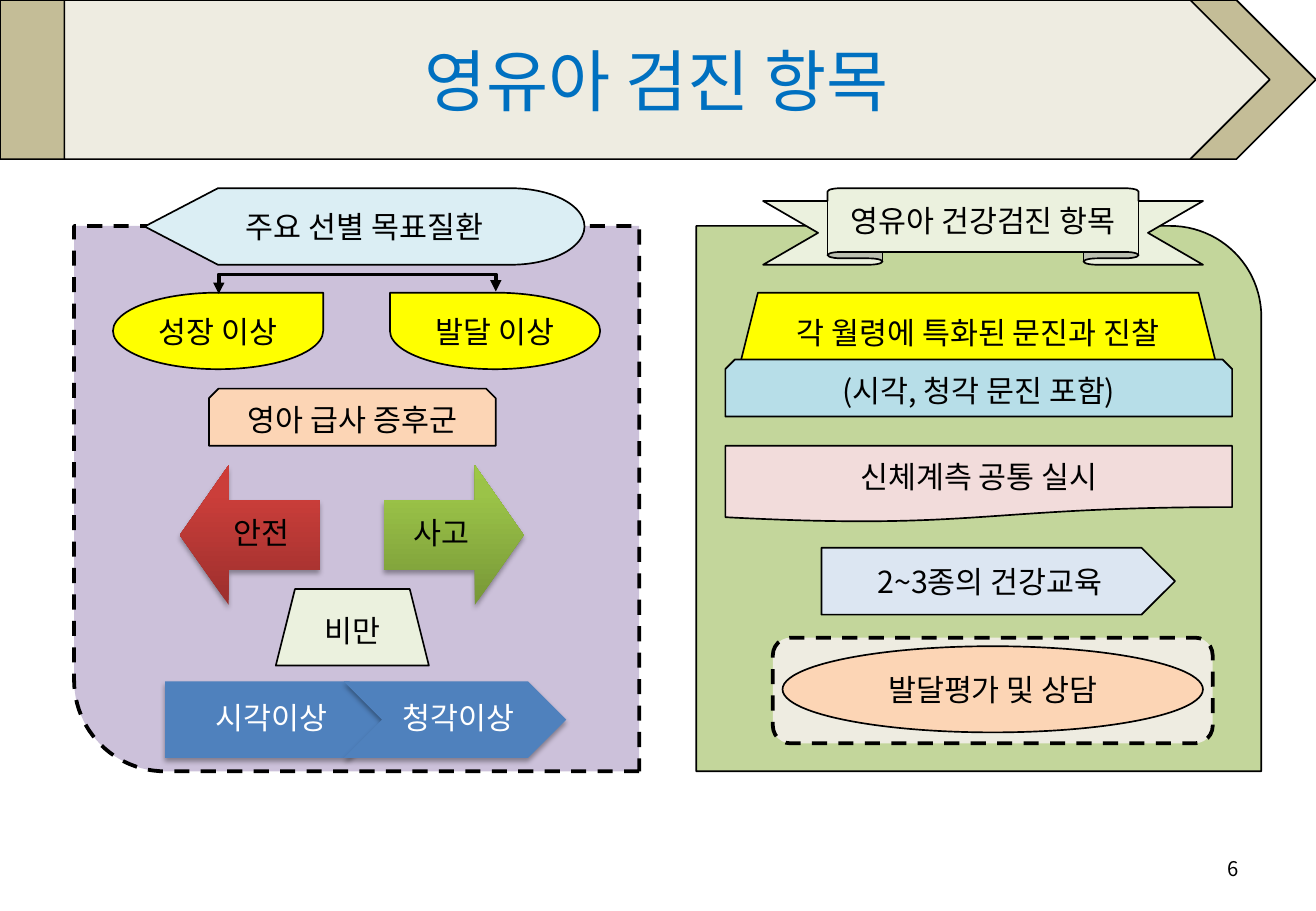
"""Builds the slide on infant health screening items."""
from dataclasses import dataclass
from typing import Any

import lxml.etree
import pptx
import pptx.dml.color
import pptx.enum.dml
import pptx.enum.shapes
import pptx.enum.text
import pptx.oxml.ns
import pptx.util

Inches = pptx.util.Inches
Kind = pptx.enum.shapes.MSO_SHAPE
Align = pptx.enum.text.PP_ALIGN
Box = tuple[float, float, float, float]


@dataclass(frozen=True)
class Theme:
    font: str = "Noto Sans CJK KR"
    head: int = 40
    body: int = 18
    foot: int = 12
    thin: float = 1
    thick: float = 2.25
    ink: str = "000000"
    white: str = "FFFFFF"
    title: str = "0070C0"
    tan: str = "C4BD97"
    cream: str = "EEECE1"
    purple: str = "CCC1DA"
    aqua: str = "DBEEF4"
    yellow: str = "FFFF00"
    peach: str = "FCD5B5"
    blue: str = "4F81BD"
    pale: str = "EBF1DE"
    green: str = "C3D69B"
    sky: str = "B7DEE8"
    pink: str = "F2DCDB"
    ice: str = "DCE6F2"
    reds: tuple[str, ...] = ("9C2F2D", "CB3E3A", "CE3B37")
    limes: tuple[str, ...] = ("779737", "9BC348", "9DC746")


@dataclass(frozen=True)
class Item:
    kind: Any
    box: Box
    fill: str | tuple[str, ...]
    text: str = ""
    turn: int = 0
    flip: bool = False
    dash: bool = False
    shade: bool = False
    bends: tuple[float, ...] = ()


@dataclass(frozen=True)
class Label:
    box: Box
    text: str
    color: str
    size: int
    pads: Box = (0.1, 0.05, 0.1, 0.05)
    align: Any = Align.CENTER
    space: float = 1


LOOK = Theme()
ARROW = (0.5, 0.35)
PADS = (0.14, 0.14, 0.14, 0.14)
STEP = (0.1, 0.05, 0.03, 0.05)

BANNER = [
    Item(Kind.PENTAGON, (0, 0, 10.83, 1.31), LOOK.tan),
    Item(Kind.PENTAGON, (0.53, 0, 9.92, 1.31), LOOK.cream),
    Label((0.53, 0.03, 9.75, 1.25), "영유아 검진 항목", LOOK.title, LOOK.head),
    Label((7.76, 6.95, 2.53, 0.4), "6", LOOK.ink, LOOK.foot, align=Align.RIGHT),
]
LEFT = [
    Item(Kind.ROUND_1_RECTANGLE, (0.61, 1.86, 4.65, 4.49), LOOK.purple, turn=180, dash=True),
    Item(Kind.FLOWCHART_DISPLAY, (1.19, 1.55, 3.62, 0.63), LOOK.aqua, "주요 선별 목표질환"),
    Item(Kind.TEAR, (0.93, 2.41, 1.73, 0.63), LOOK.yellow, "성장 이상"),
    Item(Kind.TEAR, (3.21, 2.41, 1.73, 0.63), LOOK.yellow, "발달 이상", flip=True),
    Item(Kind.SNIP_2_SAME_RECTANGLE, (1.72, 3.2, 2.36, 0.47), LOOK.peach, "영아 급사 증후군"),
    Item(Kind.UP_ARROW, (1.48, 3.83, 1.15, 1.15), LOOK.reds, turn=270, shade=True, bends=ARROW),
    Label((1.68, 4.12, 0.95, 0.57), "안전", LOOK.ink, LOOK.body, PADS, space=0.9),
    Item(Kind.UP_ARROW, (3.16, 3.83, 1.15, 1.15), LOOK.limes, turn=90, shade=True, bends=ARROW),
    Label((3.16, 4.12, 0.95, 0.57), "사고", LOOK.ink, LOOK.body, PADS, space=0.9),
    Item(Kind.PENTAGON, (1.36, 5.61, 1.83, 0.63), LOOK.blue, shade=True),
    Label((1.36, 5.61, 1.68, 0.63), "시각이상", LOOK.white, LOOK.body, STEP, space=0.9),
    Item(Kind.CHEVRON, (2.83, 5.61, 1.83, 0.63), LOOK.blue, shade=True),
    Label((3.14, 5.61, 1.2, 0.63), "청각이상", LOOK.white, LOOK.body, STEP, space=0.9),
    Item(Kind.TRAPEZOID, (2.27, 4.85, 1.26, 0.63), LOOK.pale, "비만"),
]
RIGHT = [
    Item(Kind.ROUND_1_RECTANGLE, (5.73, 1.86, 4.65, 4.49), LOOK.green),
    Item(Kind.UP_RIBBON, (6.28, 1.55, 3.62, 0.63), LOOK.pale, "영유아 건강검진 항목",
         bends=(0.167, 0.707)),
    Item(Kind.TRAPEZOID, (6.08, 2.41, 3.94, 0.63), LOOK.yellow, "각 월령에 특화된 문진과 진찰"),
    Item(Kind.SNIP_2_SAME_RECTANGLE, (5.97, 2.96, 4.17, 0.47), LOOK.sky, "(시각, 청각 문진 포함)"),
    Item(Kind.FLOWCHART_DOCUMENT, (5.97, 3.67, 4.17, 0.63), LOOK.pink, "신체계측 공통 실시"),
    Item(Kind.PENTAGON, (6.76, 4.51, 2.91, 0.55), LOOK.ice, "2~3종의 건강교육"),
    Item(Kind.ROUNDED_RECTANGLE, (6.36, 5.25, 3.62, 0.87), LOOK.cream, dash=True),
    Item(Kind.OVAL, (6.44, 5.32, 3.46, 0.71), LOOK.peach, "발달평가 및 상담"),
]


def rgb(code: str) -> pptx.dml.color.RGBColor:
    return pptx.dml.color.RGBColor.from_string(code)


def node(root: Any, tag: str, **attrs: Any) -> Any:
    return lxml.etree.SubElement(
        root, pptx.oxml.ns.qn(tag), {key: str(val) for key, val in attrs.items()})


def write(frame: Any, text: str, color: str, size: int, align: Any = Align.CENTER) -> None:
    frame.vertical_anchor = pptx.enum.text.MSO_ANCHOR.MIDDLE
    para = frame.paragraphs[0]
    para.alignment = align
    run = para.add_run()
    run.text = text
    run.font.size = pptx.util.Pt(size)
    run.font.color.rgb = rgb(color)
    run.font.name = LOOK.font
    node(run._r.get_or_add_rPr(), "a:ea", typeface=LOOK.font)


def blend(shape: Any, tones: tuple[str, ...]) -> None:
    shape.fill.gradient()
    shape.fill.gradient_angle = 90
    grad = shape._element.spPr.find(pptx.oxml.ns.qn("a:gradFill"))
    grad.set("rotWithShape", "0")
    stops = grad.find(pptx.oxml.ns.qn("a:gsLst"))
    for stop in list(stops):
        stops.remove(stop)
    for place, tone in zip((0, 80000, 100000), tones):
        node(node(stops, "a:gs", pos=place), "a:srgbClr", val=tone)


def cast(shape: Any) -> None:
    glow = node(node(shape._element.spPr, "a:effectLst"), "a:outerShdw",
                blurRad=pptx.util.Pt(3.1), dist=pptx.util.Pt(1.8),
                dir=5400000, rotWithShape=0)
    node(node(glow, "a:srgbClr", val=LOOK.ink), "a:alpha", val=35000)


def draw(shapes: Any, item: Item) -> None:
    shape = shapes.add_shape(item.kind, *map(Inches, item.box))
    shape.rotation = item.turn
    for spot, bend in enumerate(item.bends):
        shape.adjustments[spot] = bend
    if item.flip:
        shape._element.spPr.find(pptx.oxml.ns.qn("a:xfrm")).set("flipH", "1")
    if isinstance(item.fill, tuple):
        blend(shape, item.fill)
    else:
        shape.fill.solid()
        shape.fill.fore_color.rgb = rgb(item.fill)
    if item.shade:
        shape.line.fill.background()
        cast(shape)
    else:
        shape.shadow.inherit = False
        shape.line.color.rgb = rgb(LOOK.ink)
        shape.line.width = pptx.util.Pt(LOOK.thick if item.dash else LOOK.thin)
        if item.dash:
            shape.line.dash_style = pptx.enum.dml.MSO_LINE.DASH
    if item.text:
        shape.text_frame.word_wrap = False
        write(shape.text_frame, item.text, LOOK.ink, LOOK.body)


def print_label(shapes: Any, label: Label) -> None:
    frame = shapes.add_textbox(*map(Inches, label.box)).text_frame
    frame.word_wrap = True
    (frame.margin_left, frame.margin_top,
     frame.margin_right, frame.margin_bottom) = map(Inches, label.pads)
    write(frame, label.text, label.color, label.size, label.align)
    frame.paragraphs[0].line_spacing = label.space


def fork(shapes: Any) -> None:
    link = shapes.add_connector(pptx.enum.shapes.MSO_CONNECTOR.ELBOW,
                                *map(Inches, (2.95, 3.55, 2.93, 1.27)))
    link.line.color.rgb = rgb(LOOK.ink)
    link.line.width = pptx.util.Pt(LOOK.thick)
    props = link._element.spPr
    props.find(pptx.oxml.ns.qn("a:xfrm")).set("rot", "5400000")
    guides = props.find(pptx.oxml.ns.qn("a:prstGeom")).get_or_add_avLst()
    node(guides, "a:gd", name="adj1", fmla="val 800000")
    line = link.line._get_or_add_ln()
    for end in ("a:headEnd", "a:tailEnd"):
        node(line, end, type="triangle")
    node(props, "a:effectLst")


def build(shapes: Any, parts: list[Item | Label]) -> None:
    for part in parts:
        if isinstance(part, Item):
            draw(shapes, part)
        else:
            print_label(shapes, part)


def main() -> None:
    deck = pptx.Presentation()
    deck.slide_width, deck.slide_height = Inches(10.83), Inches(7.5)
    shapes = deck.slides.add_slide(deck.slide_layouts[6]).shapes
    build(shapes, BANNER)
    left = shapes.add_group_shape().shapes
    build(left, LEFT)
    fork(left)
    build(shapes.add_group_shape().shapes, RIGHT)
    deck.save("out.pptx")


if __name__ == "__main__":
    main()
